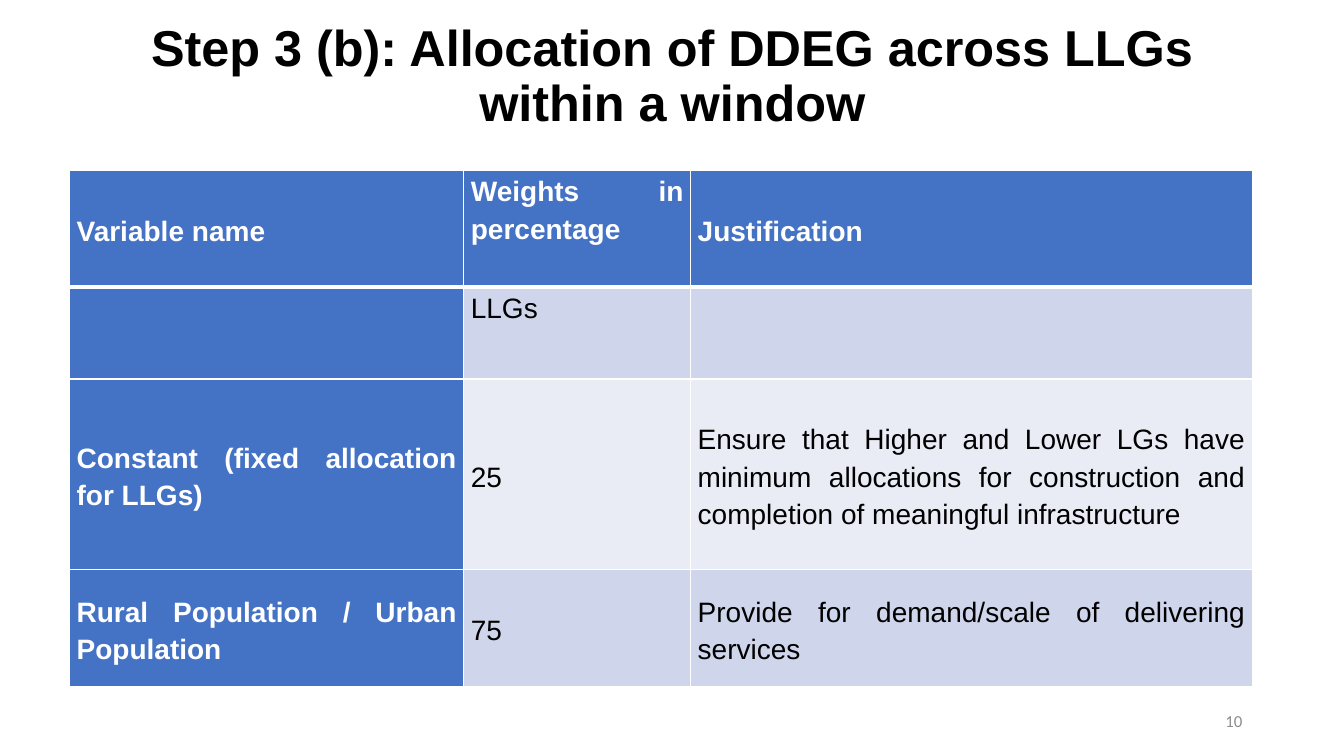
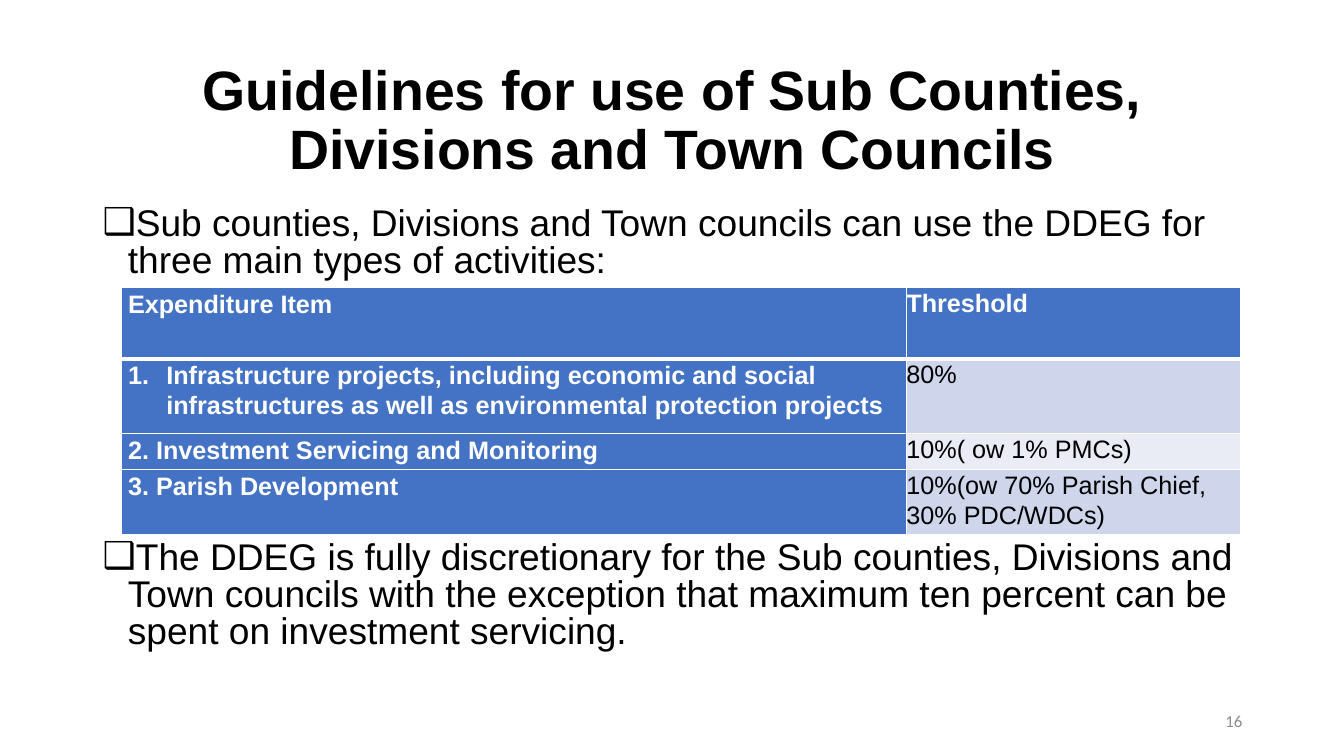
from lxml.etree import SubElement as Sub
from pptx import Presentation
from pptx.dml.color import RGBColor as Rgb
from pptx.enum.text import MSO_ANCHOR as Anchor, PP_ALIGN as Align
from pptx.oxml.ns import qn
from pptx.util import Pt

PX = 9144  # one px is a hundredth of an inch
WHITE = Rgb(0xFF, 0xFF, 0xFF)
BLACK = Rgb(0, 0, 0)
GRAY = Rgb(0x8C, 0x8C, 0x8C)
BLUE = Rgb(0x44, 0x72, 0xC4)
BANDS = [Rgb(0xCF, 0xD5, 0xEA), Rgb(0xE9, 0xEB, 0xF5)]


def px(*vals):
    return [val * PX for val in vals]


def write(frame, text, size, color=BLACK, bold=False, align=Align.LEFT,
          space=1.0, font="Arial", anchor=Anchor.TOP, mark=None, hang=0):
    """Put one formatted paragraph into a text frame."""
    frame.word_wrap = True
    frame.vertical_anchor = anchor
    para = frame.paragraphs[0]
    para.alignment = align
    para.line_spacing = space
    run = para.add_run()
    run.text = text
    run.font.name = font
    run.font.size = Pt(size)
    run.font.bold = bold
    run.font.color.rgb = color
    if mark:
        props = para._p.get_or_add_pPr()
        props.set("marL", str(hang * PX))
        props.set("indent", str(-hang * PX))
        if mark == "1.":
            Sub(props, qn("a:buFont"), typeface="+mj-lt")
            Sub(props, qn("a:buAutoNum"), type="arabicPeriod")
        else:
            Sub(props, qn("a:buFont"), typeface="Arial")
            Sub(props, qn("a:buChar"), char=mark)


def edge(cell, side, width):
    line = Sub(cell._tc.get_or_add_tcPr(), qn("a:ln" + side), w=str(Pt(width)))
    fill = Sub(line, qn("a:solidFill"))
    Sub(fill, qn("a:srgbClr"), val=str(WHITE))


def base(deck, title, size, box, num):
    """Start a slide with its title and page number."""
    slide = deck.slides.add_slide(deck.slide_layouts[5])
    head = slide.shapes.title
    head.left, head.top, head.width, head.height = px(*box)
    write(head.text_frame, title, size, bold=True, align=Align.CENTER,
          space=0.9, anchor=Anchor.MIDDLE)
    foot = slide.shapes.add_textbox(*px(942, 695, 300, 40))
    write(foot.text_frame, str(num), 12, color=GRAY, align=Align.RIGHT,
          font="Calibri", anchor=Anchor.MIDDLE)
    return slide


def grid(slide, left, top, cols, rows, data, style):
    """Draw a banded table; style gives each cell's insets and text format."""
    frame = slide.shapes.add_table(
        len(rows), len(cols), *px(left, top, sum(cols), sum(rows)))
    table = frame.table
    for col, width in zip(table.columns, cols):
        col.width = width * PX
    for row, high in zip(table.rows, rows):
        row.height = high * PX
    for r, line in enumerate(data):
        for c, text in enumerate(line):
            cell = table.cell(r, c)
            dark = r == 0 or c == 0
            edge(cell, "L", 1)
            edge(cell, "R", 1)
            edge(cell, "T", 3 if r == 1 else 1)
            edge(cell, "B", 3 if r == 0 else 1)
            cell.fill.solid()
            cell.fill.fore_color.rgb = BLUE if dark else BANDS[(r + 1) % 2]
            pads, form = style(r, c)
            (cell.margin_left, cell.margin_top,
             cell.margin_right, cell.margin_bottom) = px(*pads)
            if text:
                anchor = form.pop("anchor", Anchor.TOP)
                write(cell.text_frame, text, bold=dark,
                      color=WHITE if dark else BLACK, **form)
                cell.vertical_anchor = anchor


def point(slide, top, high, text):
    box = slide.shapes.add_textbox(*px(92, top, 1150, high))
    write(box.text_frame, text, 26.5, space=0.84, mark="❑", hang=25)


def shares(deck):
    """Slide with the weights table."""
    slide = base(deck, "Step 3 (b): Allocation of DDEG across LLGs within a window",
                 36, (92, 22, 1150, 110), 10)

    def style(r, c):
        high = c == 1 and r < 2
        return (7, 0, 7, 0), dict(
            size=20, align=Align.JUSTIFY, space=1.2,
            anchor=Anchor.TOP if high else Anchor.MIDDLE)

    grid(slide, 69, 169, [391, 225, 557], [116, 91, 189, 116], [
        ["Variable name", "Weights in percentage", "Justification"],
        ["", "LLGs", ""],
        ["Constant (fixed allocation for LLGs)", "25",
         "Ensure that Higher and Lower LGs have minimum allocations for "
         "construction and completion of meaningful infrastructure"],
        ["Rural Population / Urban Population", "75",
         "Provide for demand/scale of delivering services"],
    ], style)


def guide(deck):
    """Slide with two points around the threshold table."""
    slide = base(deck, "Guidelines for use of Sub Counties, Divisions and Town Councils",
                 39.6, (92, 57, 1150, 128), 16)
    point(slide, 200, 82, "Sub counties, Divisions and Town councils can use "
          "the DDEG for three main types of activities:")
    point(slide, 531, 118, "The DDEG is fully discretionary for the Sub counties, "
          "Divisions and Town councils with the exception that maximum ten "
          "percent can be spent on investment servicing.")

    def style(r, c):
        form = dict(size=18, space=1.07)
        if (r, c) == (1, 0):
            form.update(mark="1.", hang=38)
        return ((0, 0, 0, 0) if c else (7, 1, 7, 0)), form

    grid(slide, 120, 285, [779, 331], [71, 74, 36, 59], [
        ["Expenditure Item", "Threshold"],
        ["Infrastructure projects, including economic and social "
         "infrastructures as well as environmental protection projects", "80%"],
        ["2. Investment Servicing and Monitoring", "10%( ow 1% PMCs)"],
        ["3. Parish Development", "10%(ow 70% Parish Chief, 30% PDC/WDCs)"],
    ], style)


def main():
    deck = Presentation()
    deck.slide_width, deck.slide_height = px(1333, 750)
    shares(deck)
    guide(deck)
    deck.save("out.pptx")


if __name__ == "__main__":
    main()
